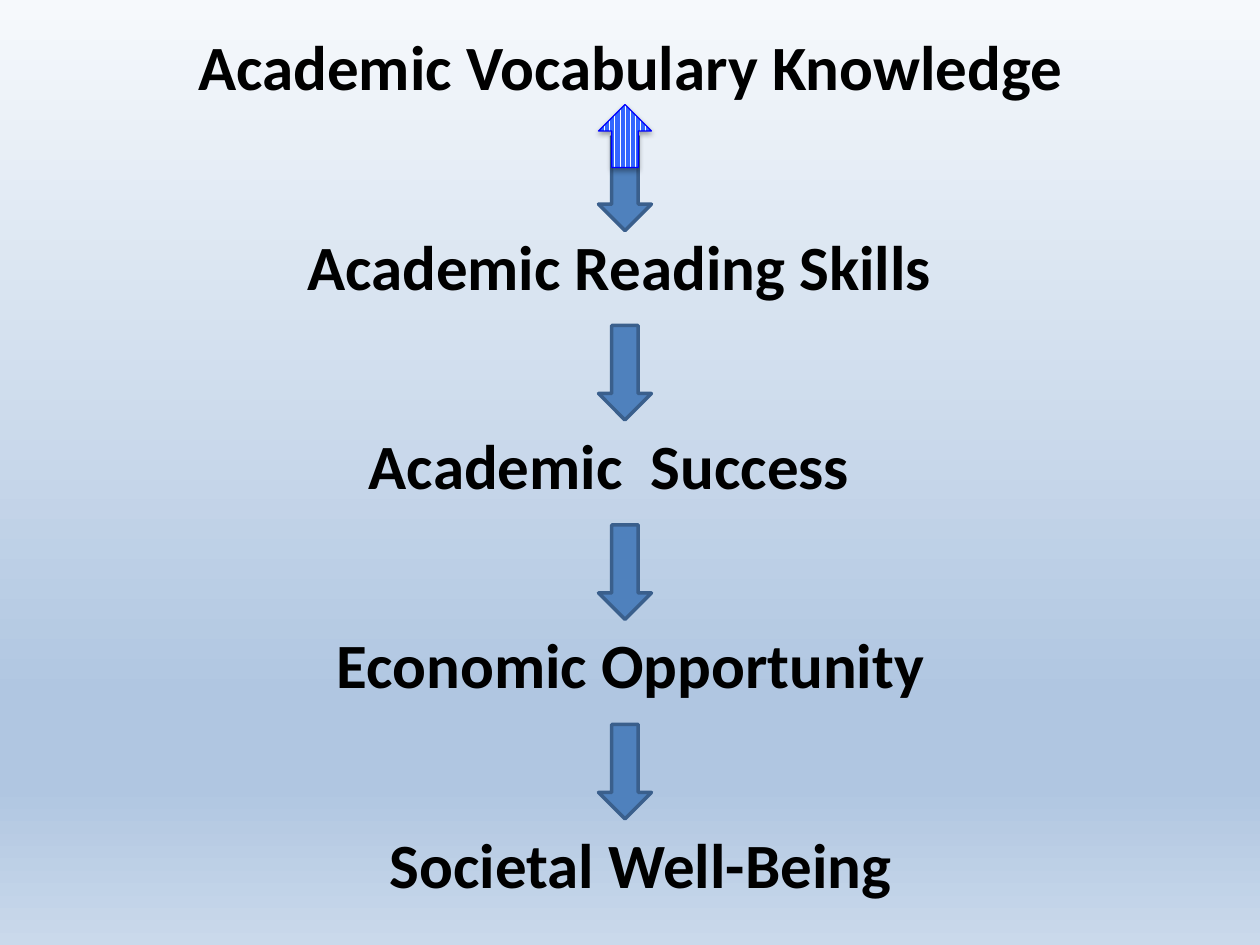
from lxml import etree
from pptx import Presentation
from pptx.dml.color import RGBColor
from pptx.enum.dml import MSO_PATTERN
from pptx.enum.shapes import MSO_SHAPE
from pptx.enum.text import MSO_AUTO_SIZE, PP_ALIGN
from pptx.oxml.ns import qn
from pptx.util import Inches, Pt

DOWN_ARROW, UP_ARROW = MSO_SHAPE.DOWN_ARROW, MSO_SHAPE.UP_ARROW
DARK_VERTICAL = MSO_PATTERN.DARK_VERTICAL
CENTER = PP_ALIGN.CENTER
FIT_SHAPE = MSO_AUTO_SIZE.SHAPE_TO_FIT_TEXT

BLACK = RGBColor(0x00, 0x00, 0x00)
WHITE = RGBColor(0xFF, 0xFF, 0xFF)
STEEL = RGBColor(0x4F, 0x81, 0xBD)
STEEL_EDGE = RGBColor(0x3A, 0x5F, 0x8C)
STRIPE = RGBColor(0x33, 0x66, 0xFF)
STRIPE_EDGE = RGBColor(0x00, 0x00, 0xFF)
PALE = RGBColor(0xF6, 0xF9, 0xFC)
MIST = RGBColor(0xB0, 0xC6, 0xE1)
HAZE = RGBColor(0xCA, 0xD9, 0xEB)

BACKGROUND_STOPS = [(0, PALE), (74, MIST), (83, MIST), (100, HAZE)]  # percent, colour

# Stage wording and the left edge of its text box
STAGES = [
    ("Academic Vocabulary Knowledge", 1.17),
    ("Academic Reading Skills", 1.08),
    ("Academic  Success", 1.0),
    ("Economic Opportunity", 1.17),
    ("Societal Well-Being", 1.25),
]
FIRST_TOP, STAGE_STEP = 0.17, 1.583
STAGE_WIDTH, STAGE_HEIGHT = 7.67, 0.71
ARROW_LEFT, ARROW_WIDTH, ARROW_HEIGHT = 4.75, 0.42, 0.75
ARROW_OFFSET = 0.83       # from the top of a stage to the arrow below it
FIRST_ARROW_TOP = 1.08    # lower, to leave room for the upward arrow
UP_TOP, UP_HEIGHT = 0.83, 0.5


def paint_background(slide, stops):
    fill = slide.background.fill
    fill.gradient()
    fill.gradient_angle = 270
    stop_list = next(slide.background._cSld.iter(qn("a:gsLst")))
    for stop in list(stop_list):
        stop_list.remove(stop)
    for percent, color in stops:
        stop = etree.SubElement(stop_list, qn("a:gs"), pos=str(percent * 1000))
        etree.SubElement(stop, qn("a:srgbClr"), val=str(color))


def add_text(slide, text, left, top, width, height, *, size=36, color=BLACK,
             bold=True, font="Calibri", align=CENTER):
    box = slide.shapes.add_textbox(*map(Inches, (left, top, width, height)))
    frame = box.text_frame
    frame.word_wrap = True
    frame.auto_size = FIT_SHAPE
    paragraph = frame.paragraphs[0]
    paragraph.alignment = align
    run = paragraph.add_run()
    run.text = text
    run.font.name, run.font.size, run.font.bold = font, Pt(size), bold
    run.font.color.rgb = color


def add_arrow(slide, preset, top, height, edge, edge_width):
    arrow = slide.shapes.add_shape(
        preset, *map(Inches, (ARROW_LEFT, top, ARROW_WIDTH, height)))
    arrow.shadow.inherit = False
    arrow.line.color.rgb = edge
    arrow.line.width = Pt(edge_width)
    return arrow


def add_drop_shadow(shape, color, opacity, blur, distance):
    effects = shape._element.spPr.find(qn("a:effectLst"))
    shadow = etree.SubElement(
        effects, qn("a:outerShdw"), blurRad=str(Pt(blur)),
        dist=str(Pt(distance)), dir="5400000", rotWithShape="0")
    tint = etree.SubElement(shadow, qn("a:srgbClr"), val=str(color))
    etree.SubElement(tint, qn("a:alpha"), val=str(opacity * 1000))


def main():
    deck = Presentation()
    deck.slide_width, deck.slide_height = Inches(10), Inches(7.5)
    slide = deck.slides.add_slide(deck.slide_layouts[6])
    paint_background(slide, BACKGROUND_STOPS)

    stage_tops = [FIRST_TOP + i * STAGE_STEP for i in range(len(STAGES))]
    for (wording, left), top in zip(STAGES, stage_tops):
        add_text(slide, wording, left, top, STAGE_WIDTH, STAGE_HEIGHT)

    arrow_tops = [FIRST_ARROW_TOP] + [top + ARROW_OFFSET for top in stage_tops[1:-1]]
    for top in arrow_tops:
        arrow = add_arrow(slide, DOWN_ARROW, top, ARROW_HEIGHT, STEEL_EDGE, 2)
        arrow.fill.solid()
        arrow.fill.fore_color.rgb = STEEL

    feedback = add_arrow(slide, UP_ARROW, UP_TOP, UP_HEIGHT, STRIPE_EDGE, 0.75)
    feedback.fill.patterned()
    feedback.fill.pattern = DARK_VERTICAL
    feedback.fill.fore_color.rgb = STRIPE
    feedback.fill.back_color.rgb = WHITE
    add_drop_shadow(feedback, BLACK, opacity=35, blur=3.1, distance=1.8)

    deck.save("out.pptx")


if __name__ == "__main__":
    main()
